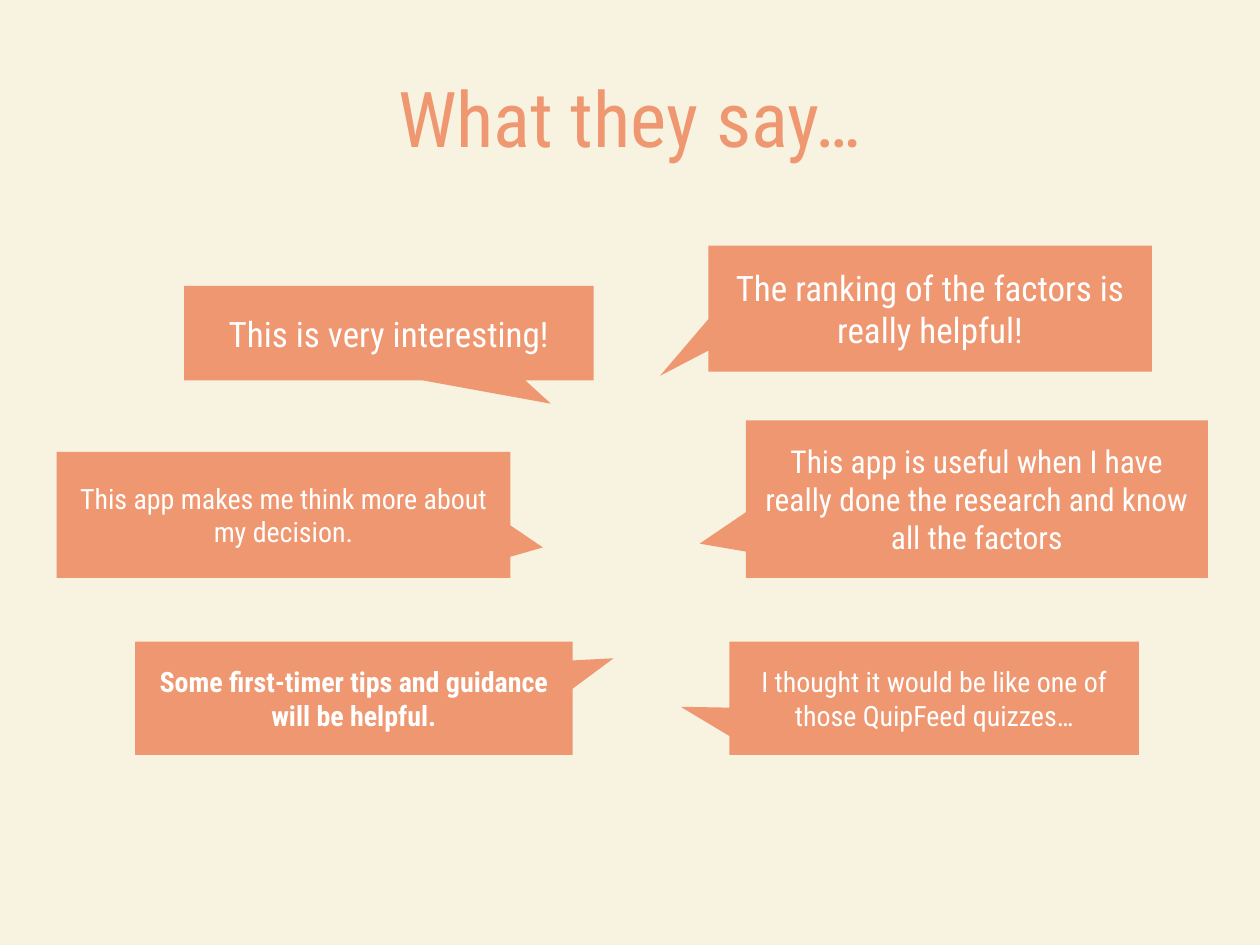
"""Build the "What they say…" slide: user quotes in speech callouts."""
from dataclasses import dataclass

from pptx import Presentation
from pptx.dml.color import RGBColor
from pptx.enum import shapes, text
from pptx.util import Pt


@dataclass(frozen=True)
class Theme:
    paper: RGBColor = RGBColor.from_string("F7F3E0")
    coral: RGBColor = RGBColor.from_string("EF9770")
    white: RGBColor = RGBColor.from_string("FFFFFF")
    font: str = "Roboto Condensed"
    title: int = 44
    large: int = 20
    medium: int = 18
    small: int = 16


theme = Theme()


def write(holder, words, size, color, bold=False):
    frame = holder.text_frame
    frame.word_wrap = True
    frame.vertical_anchor = text.MSO_ANCHOR.MIDDLE
    frame.text = words
    paragraph = frame.paragraphs[0]
    paragraph.alignment = text.PP_ALIGN.CENTER
    font = paragraph.runs[0].font
    font.name = theme.font
    font.size = Pt(size)
    font.bold = bold
    font.color.rgb = color


deck = Presentation()
deck.slide_width, deck.slide_height = Pt(720), Pt(540)
slide = deck.slides.add_slide(deck.slide_layouts[6])
slide.background.fill.solid()
slide.background.fill.fore_color.rgb = theme.paper

heading = slide.shapes.add_textbox(Pt(36), Pt(21.6), Pt(648), Pt(90))
write(heading, "What they say…", theme.title, theme.coral)

quotes = [
    ("The ranking of the factors is really helpful!",
     (404.8, 140.4, 253.4, 72), (-0.609, 0.533), theme.large, False),
    ("This app makes me think more about my decision.",
     (32.4, 258.2, 259.2, 72), (0.572, 0.259), theme.small, False),
    ("Some first-timer tips and guidance will be helpful.",
     (77.2, 366.6, 250, 64.8), (0.594, -0.352), theme.small, True),
    ("I thought it would be like one of those QuipFeed quizzes…",
     (416.8, 366.6, 234, 64.8), (-0.619, 0.076), theme.small, False),
    ("This app is useful when I have really done the research and know all the factors",
     (426.2, 240.2, 264, 90), (-0.6, 0.283), theme.medium, False),
    ("This is very interesting!",
     (105.2, 163.4, 234, 54), (0.396, 0.747), theme.large, False),
]

for words, box, tip, size, bold in quotes:
    callout = slide.shapes.add_shape(
        shapes.MSO_SHAPE.RECTANGULAR_CALLOUT, *map(Pt, box))
    callout.adjustments[0], callout.adjustments[1] = tip
    callout.shadow.inherit = False
    callout.fill.solid()
    callout.fill.fore_color.rgb = theme.coral
    callout.line.fill.background()
    write(callout, words, size, theme.white, bold)

deck.save("out.pptx")
